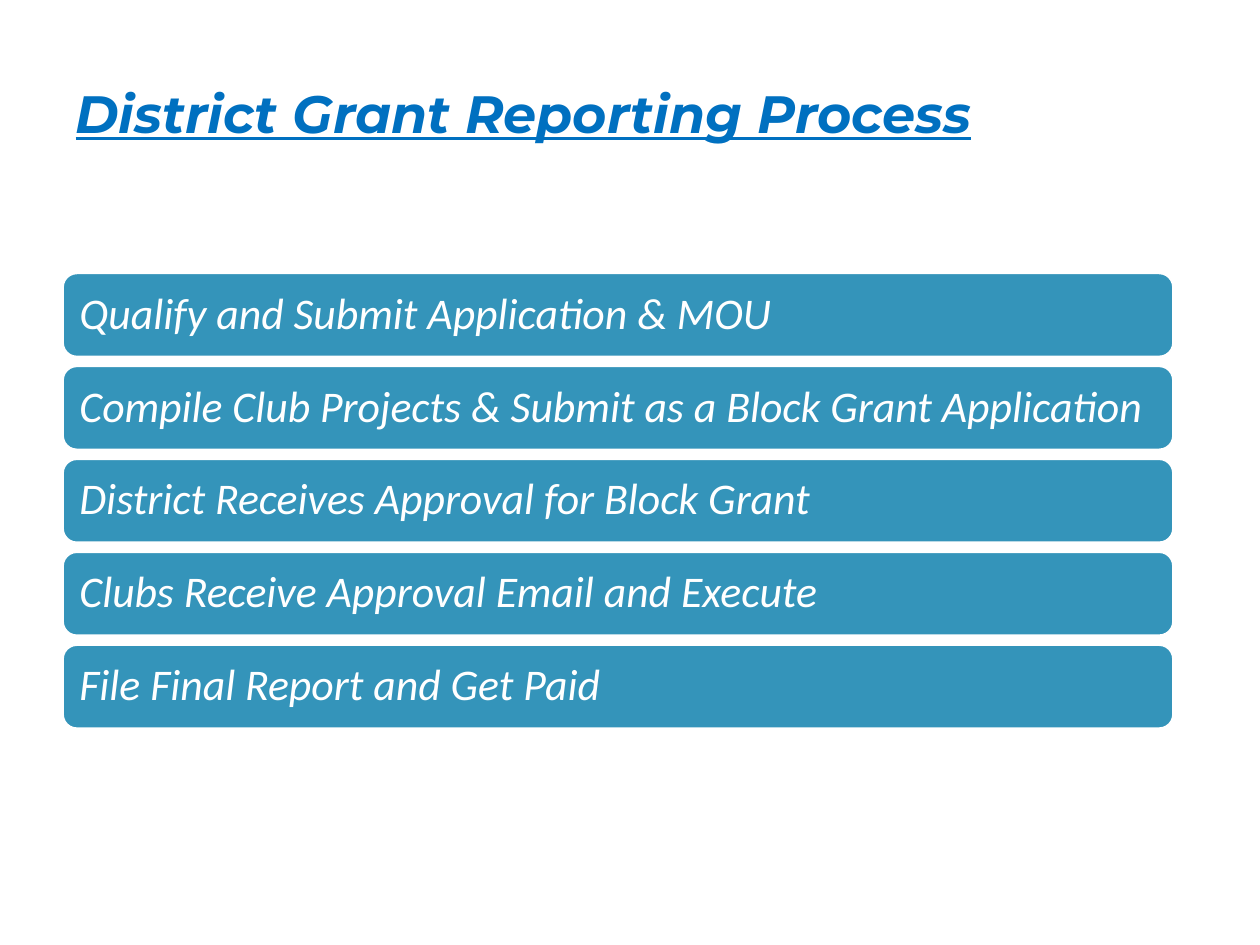
from pptx import Presentation
from pptx.dml.color import RGBColor
from pptx.enum import shapes, text
from pptx.util import Inches, Pt

WHITE = RGBColor(0xFF, 0xFF, 0xFF)
TITLE_BLUE = RGBColor(0x00, 0x70, 0xC0)
STEP_TEAL = RGBColor(0x34, 0x94, 0xBA)

STEPS = [
    "Qualify and Submit Application & MOU",
    "Compile Club Projects & Submit as a Block Grant Application",
    "District Receives Approval for Block Grant",
    "Clubs Receive Approval Email and Execute",
    "File Final Report and Get Paid",
]


def write_line(frame, wording, font_name, size, color):
    """Write one left-aligned italic line, centred vertically."""
    frame.word_wrap = True
    frame.auto_size = text.MSO_AUTO_SIZE.NONE
    frame.vertical_anchor = text.MSO_ANCHOR.MIDDLE
    line = frame.paragraphs[0]
    line.alignment = text.PP_ALIGN.LEFT
    line.line_spacing = 0.9
    run = line.add_run()
    run.text = wording
    run.font.name = font_name
    run.font.size = Pt(size)
    run.font.italic = True
    run.font.color.rgb = color
    return run


def place_title(slide, left, top, width, height):
    title = slide.shapes.title
    title.left, title.top, title.width, title.height = left, top, width, height
    title.fill.solid()
    title.fill.fore_color.rgb = WHITE
    heading = write_line(title.text_frame, "District Grant Reporting Process",
                         "Montserrat", 30, TITLE_BLUE)
    heading.font.bold = True
    heading.font.underline = True


def place_steps(slide, left, top, width, height):
    """Stack the steps as bars with equal gaps, filling the given box."""
    bar_height = Inches(0.66)
    pitch = (height - bar_height) / (len(STEPS) - 1)
    for index, step in enumerate(STEPS):
        bar = slide.shapes.add_shape(
            shapes.MSO_SHAPE.ROUNDED_RECTANGLE,
            left, top + round(index * pitch), width, bar_height)
        bar.shadow.inherit = False
        bar.fill.solid()
        bar.fill.fore_color.rgb = STEP_TEAL
        bar.line.color.rgb = WHITE
        bar.line.width = Pt(1)
        write_line(bar.text_frame, step, "Calibri", 25, WHITE)


def main():
    deck = Presentation()
    deck.slide_width, deck.slide_height = Inches(10), Inches(7.5)
    slide = deck.slides.add_slide(deck.slide_layouts[5])  # title only

    # Heading
    place_title(slide, Inches(0.5), Inches(0.3), Inches(9), Inches(1.25))
    # Process steps
    place_steps(slide, Inches(0.5), Inches(2.17), Inches(8.81), Inches(3.61))

    deck.save("out.pptx")


if __name__ == "__main__":
    main()
